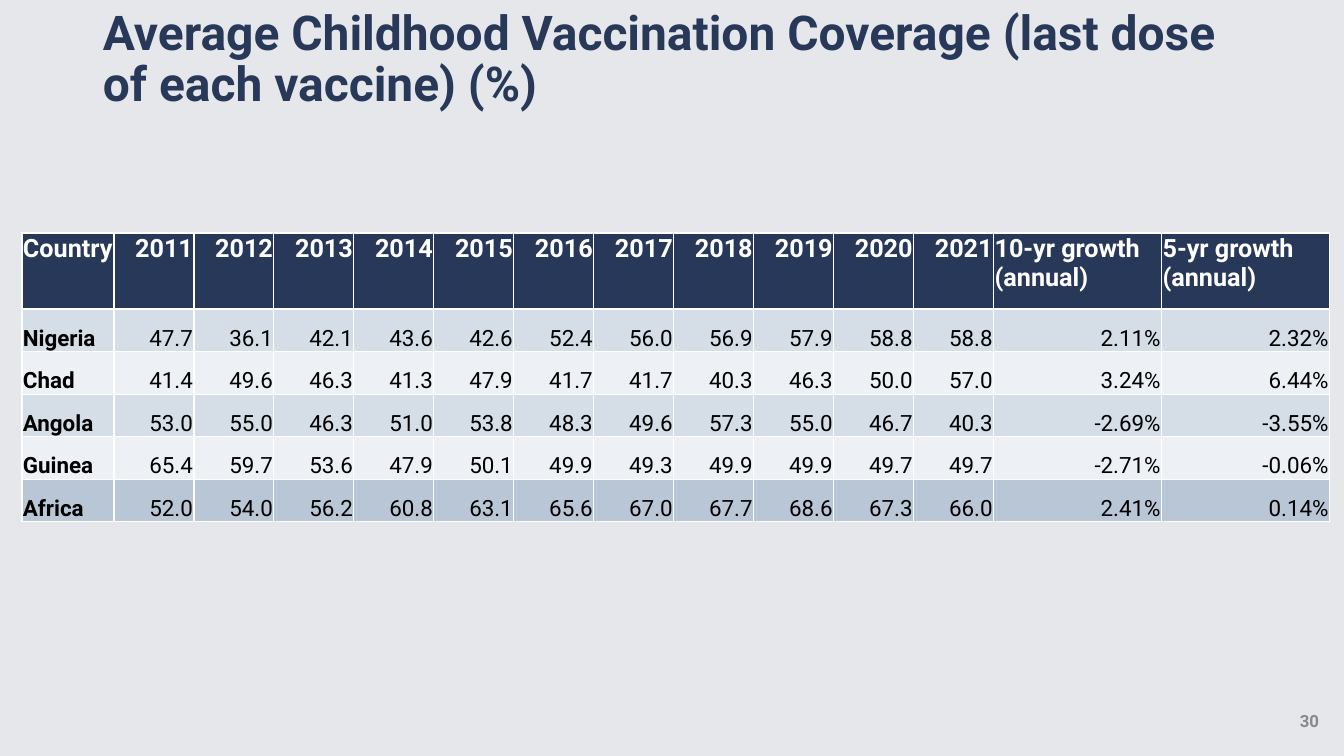
import pptx
import pptx.dml.color
import pptx.enum.text
import pptx.util
from lxml import etree
from pptx.oxml.ns import qn

EMU_PER_PX = 914400 / 100.8
FONT = "Roboto"
COLORS = {
    "background": "E5E7EB",
    "navy": "283859",
    "white": "FFFFFF",
    "black": "000000",
    "gray": "898989",
    "band_dark": "D5DDE7",
    "band_light": "EDF1F5",
    "total": "B9C6D5",
}
ALIGN = pptx.enum.text.PP_ALIGN
ANCHOR = pptx.enum.text.MSO_ANCHOR

HEADER = ["Country", *map(str, range(2011, 2022)),
          "10-yr growth (annual)", "5-yr growth (annual)"]
COVERAGE = [
    ["Nigeria", "47.7", "36.1", "42.1", "43.6", "42.6", "52.4", "56.0",
     "56.9", "57.9", "58.8", "58.8", "2.11%", "2.32%"],
    ["Chad", "41.4", "49.6", "46.3", "41.3", "47.9", "41.7", "41.7",
     "40.3", "46.3", "50.0", "57.0", "3.24%", "6.44%"],
    ["Angola", "53.0", "55.0", "46.3", "51.0", "53.8", "48.3", "49.6",
     "57.3", "55.0", "46.7", "40.3", "-2.69%", "-3.55%"],
    ["Guinea", "65.4", "59.7", "53.6", "47.9", "50.1", "49.9", "49.3",
     "49.9", "49.9", "49.7", "49.7", "-2.71%", "-0.06%"],
    ["Africa", "52.0", "54.0", "56.2", "60.8", "63.1", "65.6", "67.0",
     "67.7", "68.6", "67.3", "66.0", "2.41%", "0.14%"],
]
COLUMN_WIDTHS = [92] + [80] * 11 + [168] * 2
HEADER_HEIGHT = 76
BODY_HEIGHT = 213


def px(n):
    return pptx.util.Emu(round(n * EMU_PER_PX))


def rgb(name):
    return pptx.dml.color.RGBColor.from_string(COLORS[name])


def add_run(p, text, size, color, bold):
    r = p.add_run()
    r.text = text
    r.font.name = FONT
    r.font.size = pptx.util.Pt(size)
    r.font.bold = bold
    r.font.color.rgb = rgb(color)


def add_text(s, box, text, size, color, align=ALIGN.LEFT, spacing=1.0):
    """Add a bold, vertically centred text box; box is left, top, width, height."""
    tf = s.shapes.add_textbox(*map(px, box)).text_frame
    tf.word_wrap = True
    tf.vertical_anchor = ANCHOR.MIDDLE
    p = tf.paragraphs[0]
    p.alignment = align
    p.line_spacing = spacing
    add_run(p, text, size, color, True)


def add_borders(cell):
    tc_pr = cell._tc.get_or_add_tcPr()
    for side in ("lnL", "lnR", "lnT", "lnB"):
        ln = etree.SubElement(tc_pr, qn(f"a:{side}"), w=str(pptx.util.Pt(1)))
        fill = etree.SubElement(ln, qn("a:solidFill"))
        etree.SubElement(fill, qn("a:srgbClr"), val=COLORS["white"])


def fill_cell(cell, text, fill, size, color, bold, align, anchor):
    add_borders(cell)
    cell.fill.solid()
    cell.fill.fore_color.rgb = rgb(fill)
    cell.margin_left = cell.margin_top = px(1)
    cell.margin_right = px(1 if align == ALIGN.RIGHT else 0)
    cell.margin_bottom = 0
    cell.vertical_anchor = anchor
    p = cell.text_frame.paragraphs[0]
    p.alignment = align
    add_run(p, text, size, color, bold)


def add_coverage_table(s, left, top):
    rows = [HEADER] + COVERAGE
    table = s.shapes.add_table(
        len(rows), len(HEADER), px(left), px(top),
        px(sum(COLUMN_WIDTHS)), px(HEADER_HEIGHT + BODY_HEIGHT)).table
    for column, width in zip(table.columns, COLUMN_WIDTHS):
        column.width = px(width)
    for row in table.rows:
        row.height = px(BODY_HEIGHT / len(COVERAGE))
    table.rows[0].height = px(HEADER_HEIGHT)

    for j, text in enumerate(HEADER):
        align = ALIGN.RIGHT if text.isdigit() else ALIGN.LEFT
        fill_cell(table.cell(0, j), text, "navy", 18, "white", True,
                  align, ANCHOR.TOP)
    for i, values in enumerate(COVERAGE, start=1):
        band = "band_dark" if i % 2 else "band_light"
        fill = "total" if i == len(COVERAGE) else band
        for j, text in enumerate(values):
            align = ALIGN.RIGHT if j else ALIGN.LEFT
            fill_cell(table.cell(i, j), text, fill, 16, "black", j == 0,
                      align, ANCHOR.BOTTOM)


def main():
    prs = pptx.Presentation()
    prs.slide_width, prs.slide_height = px(1344), px(756)
    s = prs.slides.add_slide(prs.slide_layouts[6])
    s.background.fill.solid()
    s.background.fill.fore_color.rgb = rgb("background")

    add_text(s, (93, 15, 1159, 91),
             "Average Childhood Vaccination Coverage (last dose of each vaccine) (%)",
             34.2, "navy", spacing=0.9)
    add_text(s, (1027, 701, 302, 40), "30", 12, "gray", ALIGN.RIGHT)
    add_coverage_table(s, 22, 233)
    prs.save("out.pptx")


if __name__ == "__main__":
    main()
